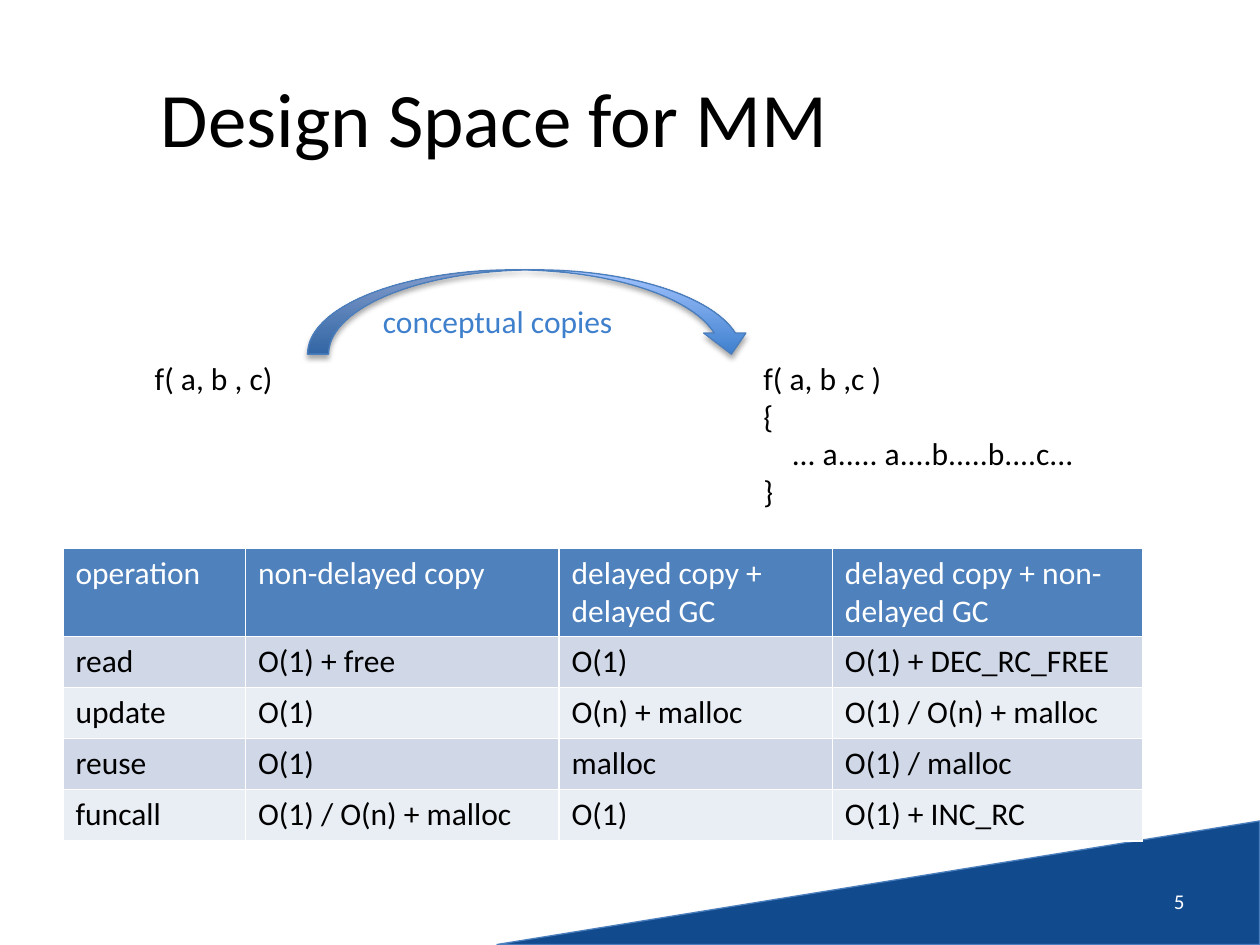
from pptx import Presentation
from pptx.dml.color import RGBColor
from pptx.enum.shapes import MSO_SHAPE
from pptx.enum.text import MSO_ANCHOR, MSO_AUTO_SIZE, PP_ALIGN
from pptx.oxml import parse_xml
from pptx.oxml.ns import nsdecls
from pptx.util import Cm, Pt

BLACK, WHITE, EDGE = "000000", "FFFFFF", "4B7EBC"
HEADER, BANDS = "4F81BD", ("E9EDF4", "D0D8E8")
COLUMN_WIDTHS = (3.68, 6.32, 5.51, 6.25)
ROW_HEIGHTS = (1.75, 1.03, 1.03, 1.03, 1.03)
COSTS = (
    ("operation", "non-delayed copy", "delayed copy + delayed GC", "delayed copy + non-delayed GC"),
    ("read", "O(1) + free", "O(1)", "O(1) + DEC_RC_FREE"),
    ("update", "O(1)", "O(n) + malloc", "O(1) / O(n) + malloc"),
    ("reuse", "O(1)", "malloc", "O(1) / malloc"),
    ("funcall", "O(1) / O(n) + malloc", "O(1)", "O(1) + INC_RC"),
)
FUNCTION_BODY = ("f( a, b ,c )", "{", "    ... a..... a....b.....b....c...", "}")


def rgb(value):
    """Return the colour for a hex string."""
    return RGBColor.from_string(value)


def cms(*values):
    """Convert numbers to centimetre lengths."""
    return [Cm(v) for v in values]


def write(tf, lines, size=18, color=BLACK, align=None):
    """Fill a text frame with one formatted paragraph per line."""
    fmt = {"name": "Calibri", "size": Pt(size), "bold": False}
    for i, line in enumerate(lines):
        p = tf.add_paragraph() if i else tf.paragraphs[0]
        p.alignment = align
        r = p.add_run()
        r.text = line
        for key, value in fmt.items():
            setattr(r.font, key, value)
        r.font.color.rgb = rgb(color)


def add_title(s, text, box):
    """Place the title placeholder and write its text."""
    sp = s.shapes.title
    for key, value in zip(("left", "top", "width", "height"), cms(*box)):
        setattr(sp, key, value)
    sp.text_frame.vertical_anchor = MSO_ANCHOR.MIDDLE
    write(sp.text_frame, [text], 44, align=PP_ALIGN.CENTER)


def add_label(shapes, lines, box, color=BLACK):
    """Add an unwrapped text box that fits its text."""
    tf = shapes.add_textbox(*cms(*box)).text_frame
    tf.word_wrap = False
    tf.auto_size = MSO_AUTO_SIZE.SHAPE_TO_FIT_TEXT
    write(tf, lines, color=color)


def add_number(s, text, box):
    """Add the page number in the lower right corner."""
    tf = s.shapes.add_textbox(*cms(*box)).text_frame
    tf.word_wrap = True
    tf.vertical_anchor = MSO_ANCHOR.MIDDLE
    write(tf, [text], 12, WHITE, PP_ALIGN.RIGHT)


def add_outlined(shapes, kind, box):
    """Add a preset shape with a thin edge and a soft shadow below."""
    sp = shapes.add_shape(kind, *cms(*box))
    sp.line.color.rgb = rgb(EDGE)
    sp.line.width = Pt(0.75)
    sp.shadow.inherit = False
    effects = sp.element.spPr.find("{*}effectLst")
    effects.append(parse_xml(
        f'<a:outerShdw {nsdecls("a")} blurRad="{Pt(3.1)}" dist="{Pt(1.8)}" dir="5400000" '
        f'rotWithShape="0"><a:srgbClr val="{BLACK}"><a:alpha val="35000"/></a:srgbClr></a:outerShdw>'))
    return sp


def add_wedge(s):
    """Add the blue corner wedge."""
    sp = add_outlined(s.shapes, MSO_SHAPE.RIGHT_TRIANGLE, (16.46, 10.11, 2.49, 15.37))
    sp.rotation = 270
    sp.fill.solid()
    sp.fill.fore_color.rgb = rgb("114B8E")


def add_call_diagram(s):
    """Add the grouped call, function body and copy arrow."""
    shapes = s.shapes.add_group_shape().shapes
    add_label(shapes, ["f( a, b , c)"], (2.87, 7.11, 3.3, 1.14))
    sp = add_outlined(shapes, MSO_SHAPE.CURVED_DOWN_ARROW, (6.2, 5.44, 8.97, 1.7))
    sp.fill.gradient()
    sp.fill.gradient_angle = 90
    for stop, position, color in zip(sp.fill.gradient_stops, (0, 1), ("3F80CE", "A4C4FF")):
        stop.position = position
        stop.color.rgb = rgb(color)
    add_label(shapes, FUNCTION_BODY, (15.14, 7.11, 7.87, 3.84))
    add_label(shapes, ["conceptual copies"], (7.47, 5.97, 5.97, 1.14), "3F80CD")


def add_cost_table(s):
    """Add the banded table of operation costs."""
    box = cms(1.27, 11.05, sum(COLUMN_WIDTHS), sum(ROW_HEIGHTS))
    table = s.shapes.add_table(len(COSTS), len(COLUMN_WIDTHS), *box).table
    for column, width in zip(table.columns, COLUMN_WIDTHS):
        column.width = Cm(width)
    for i, texts in enumerate(COSTS):
        table.rows[i].height = Cm(ROW_HEIGHTS[i])
        for j, text in enumerate(texts):
            cell = table.cell(i, j)
            cell.fill.solid()
            cell.fill.fore_color.rgb = rgb(BANDS[i % 2] if i else HEADER)
            write(cell.text_frame, [text], color=BLACK if i else WHITE)


def main():
    """Build the slide and save it."""
    prs = Presentation()
    prs.slide_width, prs.slide_height = cms(25.4, 19.05)
    s = prs.slides.add_slide(prs.slide_layouts[5])
    add_wedge(s)
    add_title(s, "Design Space for MM", (1.27, 0.76, 17.4, 3.18))
    add_number(s, "5", (18.21, 17.65, 5.92, 1.02))
    add_call_diagram(s)
    add_cost_table(s)
    prs.save("out.pptx")


if __name__ == "__main__":
    main()
